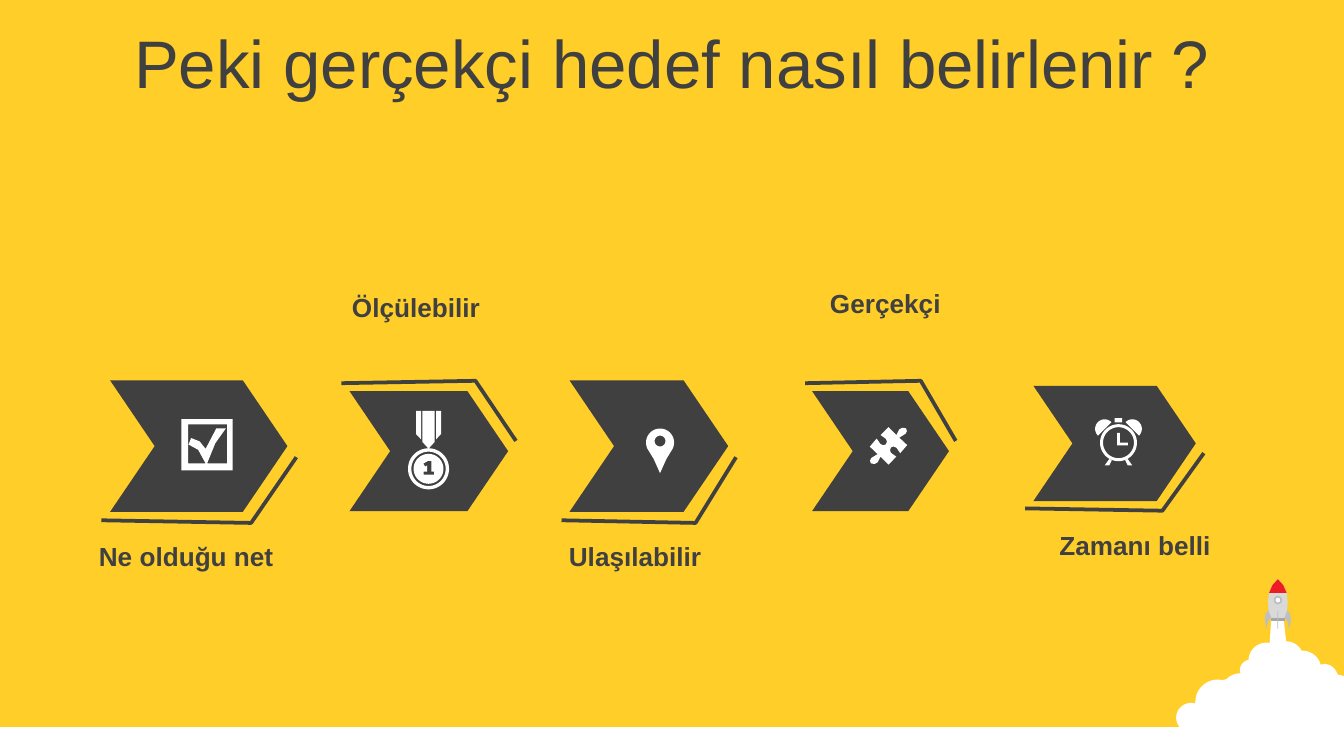
from math import cos, radians, sin

from pptx import Presentation
from pptx.dml.color import RGBColor
from pptx.enum.shapes import MSO_SHAPE
from pptx.enum.text import MSO_ANCHOR, PP_ALIGN
from pptx.util import Pt

WIDTH, HEIGHT = 720, 405
YELLOW, DARK, WHITE = "FFCE29", "404040", "FFFFFF"
SILVER, GREY, RED = "D9D9D9", "BFBFBF", "ED1C24"

STEPS = [
    ((59, 203.8, 95, 70.4), True, "Ne olduğu net", (28.1, 285.8)),
    ((187.2, 209.5, 85, 64.4), False, "Ölçülebilir", (151.2, 152.6)),
    ((305.1, 203.8, 85, 70.4), True, "Ulaşılabilir", (268.6, 285.8)),
    ((435, 209.5, 73.4, 64.4), False, "Gerçekçi ", (404.6, 150.5)),
    ((553.6, 206.7, 87, 61.7), True, "Zamanı belli", (536.4, 280.1)),
]


def color(value):
    """Turn a hex string into a colour."""
    return RGBColor.from_string(value)


def paint(shape, fill=None, line=None, weight=1):
    """Set fill and line of a shape and remove its shadow."""
    shape.shadow.inherit = False
    if fill:
        shape.fill.solid()
        shape.fill.fore_color.rgb = color(fill)
    else:
        shape.fill.background()
    if line:
        shape.line.color.rgb = color(line)
        shape.line.width = Pt(weight)
    else:
        shape.line.fill.background()
    return shape


def add_preset(slide, kind, box, **style):
    """Add a painted preset shape."""
    return paint(slide.shapes.add_shape(kind, *map(Pt, box)), **style)


def add_outline(slide, contours, origin=(0, 0), closed=True, **style):
    """Add one freeform made of contours placed around an origin."""
    left, top = origin
    builder = None
    for contour in contours:
        points = [(Pt(left + x), Pt(top + y)) for x, y in contour]
        if builder is None:
            builder = slide.shapes.build_freeform(*points[0], scale=1.0)
        else:
            builder.move_to(*points[0])
        builder.add_line_segments(points[1:], close=closed)
    return paint(builder.convert_to_shape(), **style)


def add_text(slide, text, box, size=14, bold=False, anchor=MSO_ANCHOR.TOP):
    """Add a centred line of text."""
    frame = slide.shapes.add_textbox(*map(Pt, box)).text_frame
    frame.word_wrap = True
    frame.vertical_anchor = anchor
    paragraph = frame.paragraphs[0]
    paragraph.alignment = PP_ALIGN.CENTER
    run = paragraph.add_run()
    run.text = text
    run.font.name = "Arial"
    run.font.size = Pt(size)
    run.font.bold = bold
    run.font.color.rgb = color(DARK)


def arc(x, y, radius, start=0, end=360):
    """Return points along an arc, with angles clockwise from the right."""
    count = max(8, (end - start) // 6)
    angles = [radians(start + (end - start) * i / count) for i in range(count + 1)]
    return [(x + radius * cos(a), y + radius * sin(a)) for a in angles]


def rectangle(left, top, right, bottom):
    """Return the corners of a rectangle."""
    return [(left, top), (right, top), (right, bottom), (left, bottom)]


def flipped(points):
    """Mirror points about the vertical axis."""
    return [(-x, y) for x, y in points]


def symmetric(half):
    """Complete a right half with its mirror image."""
    return half + flipped(half)[::-1]


def add_step(slide, box, below, label, label_place):
    """Add a chevron, its accent line and its label."""
    left, top, width, height = box
    chevron = add_preset(slide, MSO_SHAPE.CHEVRON, box, fill=DARK)
    chevron.adjustments[0] = 0.339
    accent = [(1.05, 0.585), (0.795, 1.085), (-0.05, 1.065)]
    points = [(left + width * x, top + height * (y if below else 1 - y)) for x, y in accent]
    add_outline(slide, [points], closed=False, line=DARK, weight=2)
    add_text(slide, label, (*label_place, 143.3, 24.5), bold=True)


def add_checkbox(slide):
    """Add the ticked box icon."""
    inside = [(3.6, 2.9), (3.6, 23.8), (13, 23.8), (9, 16.5), (3.9, 13.7), (5.2, 10.2),
              (9.8, 12), (13, 16), (18.7, 5.1), (23.8, 5.1), (18.2, 13), (13.8, 23.8),
              (24.5, 23.8), (24.5, 2.9)]
    add_outline(slide, [rectangle(0, 0, 27.5, 27.5), inside], (97.2, 224.5), fill=WHITE)


def add_medal(slide):
    """Add the first place medal icon."""
    strip = [(4, -31), (6.7, -31), (6.7, -18.6), (4, -15.8)]
    ribbon = symmetric([(3.3, -31), (3.3, -14.4), (0, -10.8)])
    digit = [(1.5, -4.3), (-0.2, -4.3), (-2.8, -2.8), (-1.8, -1.2), (-0.7, -1.8), (-0.7, 1.5),
             (-2.6, 1.5), (-2.6, 3.1), (3, 3.1), (3, 1.5), (1.5, 1.5)]
    rings = [arc(0, 0, radius) for radius in (11, 9.2, 8)]
    add_outline(slide, [*rings, digit, strip, ribbon, flipped(strip)], (229.6, 251.2), fill=WHITE)


def add_pin(slide):
    """Add the map pin icon."""
    body = arc(0, 0, 7.5, 150, 390) + [(3.4, 8.8), (0, 16.4), (-3.4, 8.8)]
    add_outline(slide, [body, arc(0, -0.8, 2.9)], (353.6, 237.1), fill=WHITE)


def add_puzzle(slide):
    """Add the puzzle piece icon, which has half-turn symmetry."""
    half = [(10, -0.4), (6.3, 3.9), (4.3, 1), (2.7, 0.3), (1.4, 0.8), (0.8, 2.2), (1.3, 3.7),
            (4.2, 5.8), (0, 10), (-4.3, 5.8), (-5.8, 8.8), (-7.4, 9.7), (-9.4, 9.4),
            (-9.9, 7.9), (-9.2, 6.5), (-5.8, 4.4)]
    add_outline(slide, [half + [(-x, -y) for x, y in half]], (476, 238.9), fill=WHITE)


def add_clock(slide):
    """Add the alarm clock icon."""
    hands = [(-0.8, -5.3), (0.8, -5.3), (0.8, 0), (5, 0), (5, 1.5), (-0.8, 1.5)]
    leg = [(5, 8.8), (3.6, 9.5), (5, 12.2), (7.4, 12.2)]
    bell = arc(7.4, -7.4, 5.1, 225, 405)
    contours = [arc(0, 0, 9.9), arc(0, 0, 8.3), hands, leg, flipped(leg), bell, flipped(bell),
                rectangle(-2, -13.2, 2, -10.9)]
    add_outline(slide, contours, (599.2, 237.2), fill=WHITE)


def add_cloud(slide):
    """Add the smoke cloud with its plume."""
    left_bumps = [(638, 384.5, 7.9, 90, 285), (652.3, 376, 11.9, 180, 282),
                  (664.6, 371.5, 10.8, 225, 270), (670, 359.2, 5.8, 180, 260),
                  (678.5, 354, 9.7, 190, 280)]
    right_bumps = [(689, 353, 9.4, 270, 335), (697.7, 358.8, 10.2, 270, 345),
                   (709.2, 363.3, 7.6, 270, 345)]
    outline = [point for bump in left_bumps for point in arc(*bump)]
    outline += [(681.1, 330.5), (687.6, 330.5)]
    outline += [point for bump in right_bumps for point in arc(*bump)]
    outline += [(WIDTH, 362.2), (WIDTH, 404), (638, 404)]
    add_outline(slide, [outline], fill=WHITE)


def add_rocket(slide):
    """Add the rocket above the cloud."""
    center = (684.6, 310.3)
    nose = [(0, 0), (2.9, 3.2), (4.7, 7.3)]
    body = nose + [(5.3, 12.2), (4.9, 17.2), (3.6, 22.3)]
    fin = [(5, 16.8), (3.6, 20.5), (5.2, 22.7), (6.2, 26.6), (7, 21.5), (6.6, 18.5)]
    add_outline(slide, [symmetric(body)], center, fill=SILVER)
    add_outline(slide, [rectangle(-3.7, 20.6, 3.7, 22.3)], center, fill="A6A6A6")
    add_outline(slide, [symmetric(nose)], center, fill=RED)
    add_preset(slide, MSO_SHAPE.OVAL, (682.8, 319.7, 3.6, 3.6), fill=WHITE, line=GREY)
    add_preset(slide, MSO_SHAPE.RECTANGLE, (684.3, 327.6, 0.5, 9.2), fill=GREY)
    for side in (flipped(fin), fin):
        add_outline(slide, [side], center, fill=GREY)


def main():
    """Build the slide and save it."""
    presentation = Presentation()
    presentation.slide_width, presentation.slide_height = Pt(WIDTH), Pt(HEIGHT)
    slide = presentation.slides.add_slide(presentation.slide_layouts[6])
    slide.background.fill.solid()
    slide.background.fill.fore_color.rgb = color(YELLOW)
    add_preset(slide, MSO_SHAPE.RECTANGLE, (0, 389.5, WIDTH, HEIGHT - 389.5), fill=WHITE)
    add_cloud(slide)
    add_rocket(slide)
    add_text(slide, "Peki gerçekçi hedef nasıl belirlenir ?", (0, 10.1, WIDTH, 45.4),
             size=36, anchor=MSO_ANCHOR.MIDDLE)
    for step in STEPS:
        add_step(slide, *step)
    for add_icon in (add_checkbox, add_medal, add_pin, add_puzzle, add_clock):
        add_icon(slide)
    presentation.save("out.pptx")


if __name__ == "__main__":
    main()
